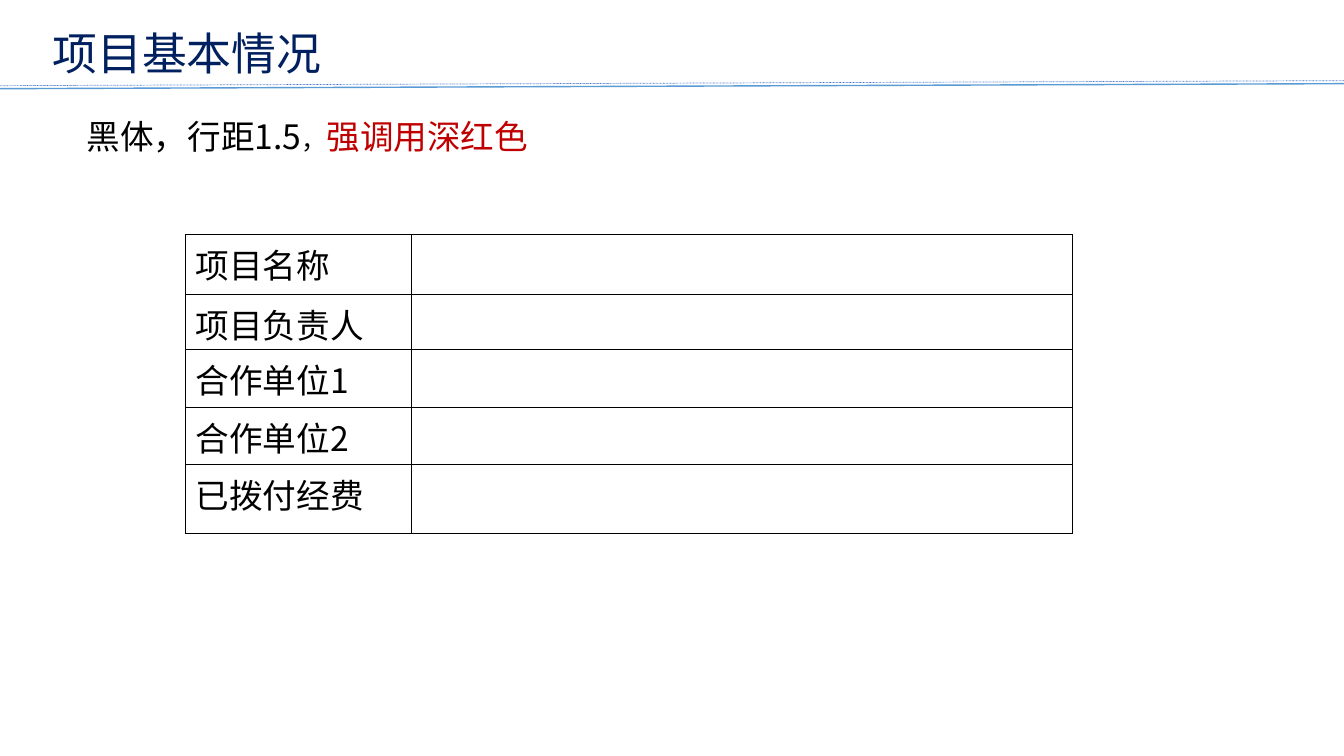
from dataclasses import dataclass

from lxml import etree
from pptx import Presentation
from pptx.dml.color import RGBColor
from pptx.enum import dml, shapes, text
from pptx.oxml import ns
from pptx.util import Inches, Pt


@dataclass(frozen=True)
class Theme:
    font: str = "Noto Sans CJK SC"
    navy: str = "002060"
    black: str = "000000"
    red: str = "C00000"
    sky: str = "5B9BD5"
    blue: str = "4472C4"
    head: int = 32
    main: int = 24
    small: int = 18


class Page:
    def __init__(self, deck, theme):
        self.theme = theme
        self.slide = deck.slides.add_slide(deck.slide_layouts[1])

    def style(self, run, size, color):
        font = run.font
        font.name, font.size = self.theme.font, Pt(size)
        font.color.rgb = RGBColor.from_string(color)
        east = etree.SubElement(run._r.get_or_add_rPr(), ns.qn("a:ea"))
        east.set("typeface", self.theme.font)

    def place(self, shape, left, top, width, height):
        shape.left, shape.top = Inches(left), Inches(top)
        shape.width, shape.height = Inches(width), Inches(height)
        frame = shape.text_frame
        frame.word_wrap = True
        frame.auto_size = text.MSO_AUTO_SIZE.NONE
        return frame

    def title(self, words, *box):
        frame = self.place(self.slide.shapes.title, *box)
        frame.text = words
        frame.vertical_anchor = text.MSO_ANCHOR.MIDDLE
        frame.margin_top = frame.margin_bottom = 0
        para = frame.paragraphs[0]
        para.alignment = text.PP_ALIGN.LEFT
        self.style(para.runs[0], self.theme.head, self.theme.navy)

    def body(self, parts, *box):
        frame = self.place(self.slide.placeholders[1], *box)
        frame.vertical_anchor = text.MSO_ANCHOR.TOP
        frame.margin_top, frame.margin_bottom = Inches(0.09), 0
        para = frame.paragraphs[0]
        props = para._p.get_or_add_pPr()
        props.set("marL", "0")
        props.set("indent", "0")
        etree.SubElement(props, ns.qn("a:buNone"))
        para.space_before = Pt(0)
        para.line_spacing = 0.82
        for words, size, color in parts:
            run = para.add_run()
            run.text = words
            self.style(run, size, color)

    def rule(self, start, end, color, width, dash=None):
        line = self.slide.shapes.add_connector(
            shapes.MSO_CONNECTOR.STRAIGHT,
            Inches(0), Inches(start), Inches(13.33), Inches(end))
        line.line.color.rgb = RGBColor.from_string(color)
        line.line.width = Pt(width)
        if dash:
            line.line.dash_style = dash
        etree.SubElement(line._element.spPr, ns.qn("a:effectLst"))

    def border(self, cell):
        props = cell._tc.get_or_add_tcPr()
        for spot, side in enumerate(("lnL", "lnR", "lnT", "lnB")):
            edge = etree.Element(ns.qn(f"a:{side}"), w=str(Pt(1)))
            fill = etree.SubElement(edge, ns.qn("a:solidFill"))
            etree.SubElement(fill, ns.qn("a:srgbClr"), val=self.theme.black)
            props.insert(spot, edge)

    def table(self, labels, left, top, cols, rows):
        grid = self.slide.shapes.add_table(
            len(rows), len(cols), Inches(left), Inches(top),
            Inches(sum(cols)), Inches(sum(rows))).table
        grid.first_row = grid.horz_banding = False
        for col, width in zip(grid.columns, cols):
            col.width = Inches(width)
        for row, height, label in zip(grid.rows, rows, labels):
            row.height = Inches(height)
            for cell in row.cells:
                cell.margin_bottom = 0
                cell.fill.background()
                self.border(cell)
            name = row.cells[0].text_frame
            name.text = label
            self.style(name.paragraphs[0].runs[0],
                       self.theme.main, self.theme.black)


def main():
    deck = Presentation()
    deck.slide_width, deck.slide_height = Inches(13.33), Inches(7.5)
    look = Theme()
    page = Page(deck, look)

    # Heading and its double rule
    page.title("项目基本情况", 0.42, 0.2, 2.96, 0.64)
    page.rule(0.88, 0.83, look.sky, 1)
    page.rule(0.85, 0.8, look.blue, 0.5, dml.MSO_LINE.ROUND_DOT)

    # Format note
    page.body([("黑体，行距1.5", look.main, look.black),
               ("，", look.small, look.black),
               ("强调用深红色", look.main, look.red)],
              0.76, 1.13, 4.66, 0.5)

    # Project facts
    page.table(["项目名称", "项目负责人", "合作单位1", "合作单位2", "已拨付经费"],
               1.84, 2.33, [2.24, 6.56], [0.59, 0.55, 0.57, 0.57, 0.68])

    deck.save("out.pptx")


if __name__ == "__main__":
    main()
